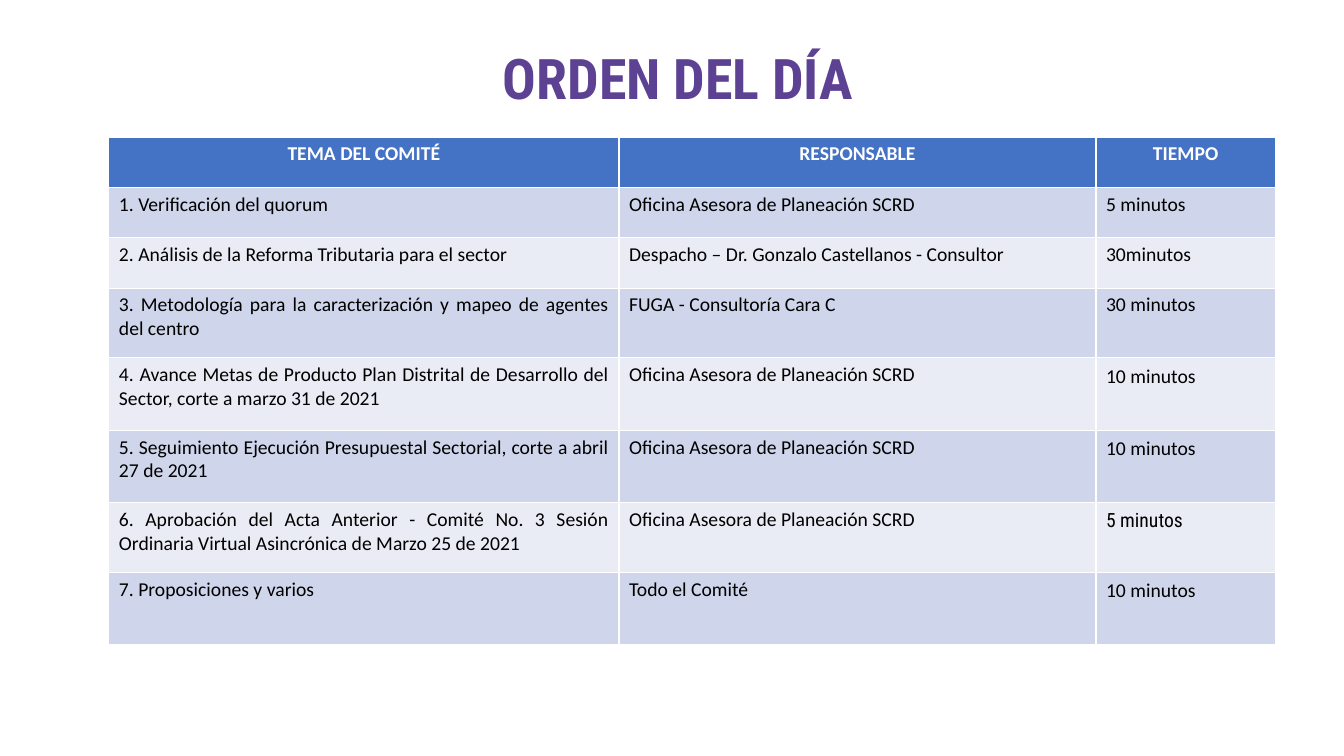
import pptx
import pptx.dml.color
import pptx.enum.text
from pptx.util import Inches, Pt

ALIGN = pptx.enum.text.PP_ALIGN
ANCHOR = pptx.enum.text.MSO_ANCHOR
AUTO_SIZE = pptx.enum.text.MSO_AUTO_SIZE

TITLE = "ORDEN DEL DÍA"
HEADERS = ("TEMA DEL COMITÉ", "RESPONSABLE", "TIEMPO")
PLANNING_OFFICE = "Oficina Asesora de Planeación SCRD"
AGENDA = [
    ("1. Verificación del quorum", PLANNING_OFFICE, "5 minutos"),
    ("2. Análisis de la Reforma Tributaria para el sector",
     "Despacho – Dr. Gonzalo Castellanos - Consultor", "30minutos"),
    ("3. Metodología para la caracterización y mapeo de agentes del centro",
     "FUGA - Consultoría Cara C", "30 minutos"),
    ("4. Avance Metas de Producto Plan Distrital de Desarrollo del Sector, "
     "corte a marzo 31 de 2021", PLANNING_OFFICE, "10 minutos"),
    ("5. Seguimiento Ejecución Presupuestal Sectorial, corte a abril 27 de 2021",
     PLANNING_OFFICE, "10 minutos"),
    ("6. Aprobación del Acta Anterior - Comité No. 3 Sesión Ordinaria Virtual "
     "Asincrónica de Marzo 25 de 2021", PLANNING_OFFICE, "5 minutos"),
    ("7. Proposiciones y varios", "Todo el Comité", "10 minutos"),
]
COLUMN_WIDTHS = (5.06, 4.73, 1.78)
ROW_HEIGHTS = (0.5, 0.5, 0.5, 0.69, 0.72, 0.72, 0.69, 0.72)
COLUMN_ALIGNMENTS = (ALIGN.JUSTIFY, ALIGN.LEFT, ALIGN.LEFT)
TIME_COLUMN = 2
FIRST_SPACED_ROW = 4
CONDENSED_ROW = 6

HEADER_FILL = "4472C4"
BAND_FILLS = ("E9EBF5", "CFD5EA")
TITLE_FONT = {"name": "Roboto Condensed", "size": Pt(40), "bold": True}
HEADER_FONT = {"name": "Calibri", "size": Pt(14), "bold": True}
BODY_FONT = {**HEADER_FONT, "bold": False}
CONDENSED_FONT = {**BODY_FONT, "name": "Roboto Condensed"}


def rgb(hex_color):
    return pptx.dml.color.RGBColor.from_string(hex_color)


def write(text_frame, text, font_format, color, alignment, line_spacing=None):
    paragraph = text_frame.paragraphs[0]
    paragraph.alignment = alignment
    paragraph.line_spacing = line_spacing
    run = paragraph.add_run()
    run.text = text
    for name, value in font_format.items():
        setattr(run.font, name, value)
    run.font.color.rgb = rgb(color)


def add_title(slide):
    title = slide.shapes.title
    title.left, title.top = Inches(1.65), Inches(0.43)
    title.width, title.height = Inches(10.15), Inches(0.63)
    frame = title.text_frame
    for name, value in {"auto_size": AUTO_SIZE.NONE, "word_wrap": True,
                        "vertical_anchor": ANCHOR.MIDDLE}.items():
        setattr(frame, name, value)
    write(frame, TITLE, TITLE_FONT, "5D4294", ALIGN.CENTER, 1.07)


def fill_cell(cell, text, row, column):
    """Write one cell with the format of its row and column."""
    cell.fill.solid()
    if row == 0:
        cell.fill.fore_color.rgb = rgb(HEADER_FILL)
        write(cell.text_frame, text, HEADER_FONT, "FFFFFF", ALIGN.CENTER)
        return
    cell.fill.fore_color.rgb = rgb(BAND_FILLS[row % 2])
    is_time = column == TIME_COLUMN
    font_format = CONDENSED_FONT if is_time and row == CONDENSED_ROW else BODY_FONT
    spacing = 1.07 if is_time and row >= FIRST_SPACED_ROW else None
    write(cell.text_frame, text, font_format, "000000",
          COLUMN_ALIGNMENTS[column], spacing)


def add_agenda(slide):
    rows = [HEADERS, *AGENDA]
    table = slide.shapes.add_table(
        len(rows), len(HEADERS), Inches(1.08), Inches(1.36),
        Inches(sum(COLUMN_WIDTHS)), Inches(sum(ROW_HEIGHTS))).table
    for column, width in zip(table.columns, COLUMN_WIDTHS):
        column.width = Inches(width)
    for row, height in zip(table.rows, ROW_HEIGHTS):
        row.height = Inches(height)
    for row_index, texts in enumerate(rows):
        for column_index, text in enumerate(texts):
            fill_cell(table.cell(row_index, column_index), text,
                      row_index, column_index)


def main():
    presentation = pptx.Presentation()
    presentation.slide_width = Inches(13.33)
    presentation.slide_height = Inches(7.5)
    title_only = presentation.slide_layouts[5]
    slide = presentation.slides.add_slide(title_only)
    add_title(slide)
    add_agenda(slide)
    presentation.save("out.pptx")


if __name__ == "__main__":
    main()
